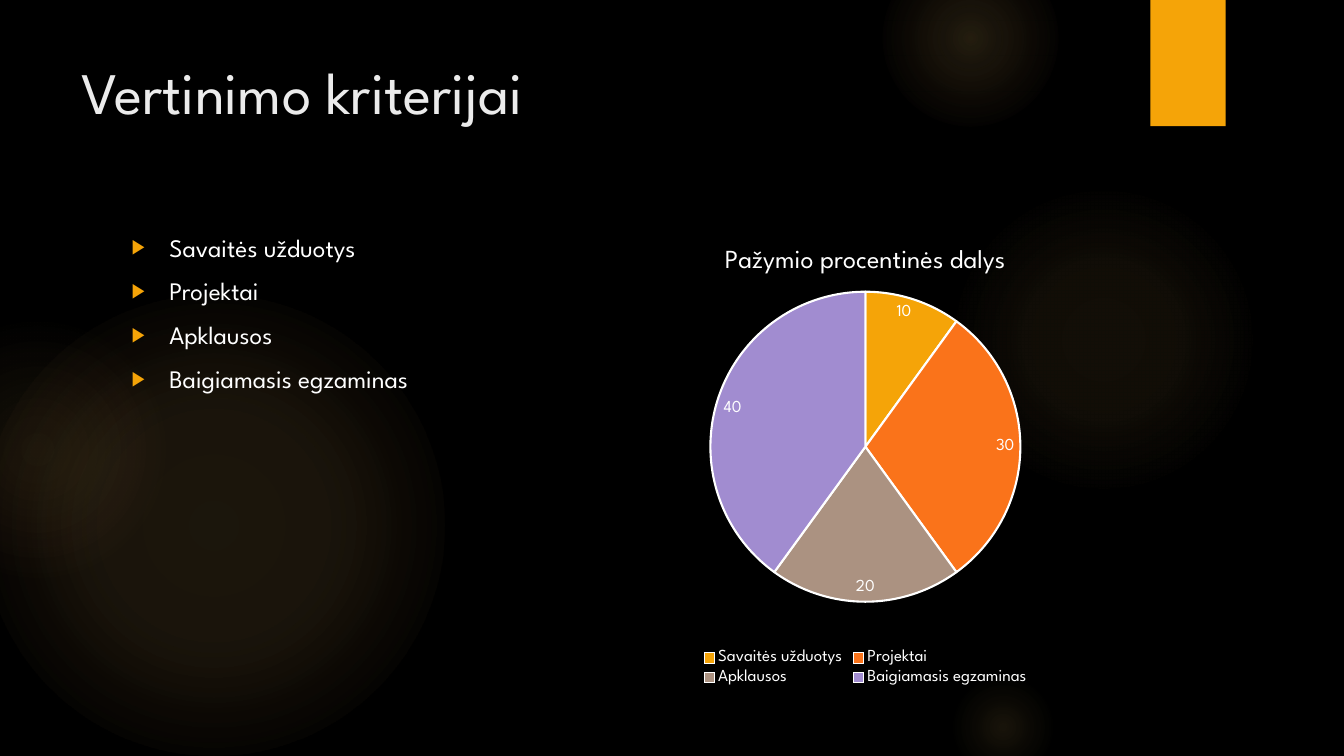
from lxml import etree
from pptx import Presentation
from pptx.chart.data import CategoryChartData
from pptx.dml.color import RGBColor
from pptx.enum import chart as chart_enum, shapes, text
from pptx.oxml import parse_xml
from pptx.oxml.ns import nsdecls, qn
from pptx.util import Cm, Pt

FONT = "League Spartan"
BLACK = RGBColor(0x00, 0x00, 0x00)
WHITE = RGBColor(0xFF, 0xFF, 0xFF)
TITLE_GREY = RGBColor(0xEB, 0xEB, 0xEB)
AMBER = RGBColor(0xF5, 0xA4, 0x08)
ORANGE = RGBColor(0xFA, 0x73, 0x1A)
TAUPE = RGBColor(0xAB, 0x92, 0x81)
LILAC = RGBColor(0xA1, 0x8C, 0xD0)
GLOW = RGBColor(0xFA, 0xC9, 0x6A)
GLOW_RED = RGBColor(0xF5, 0x9B, 0x74)

CHART_TITLE = "Pažymio procentinės dalys"
# Criterion, share of the grade, slice colour
CRITERIA = [
    ("Savaitės užduotys", 10, AMBER),
    ("Projektai", 30, ORANGE),
    ("Apklausos", 20, TAUPE),
    ("Baigiamasis egzaminas", 40, LILAC),
]
# Left, top, diameter in cm; gradient stops as position %, colour, opacity %
GLOWS = [
    (-0.43, 7.42, 11.63, [(0, GLOW, 11), (36, GLOW, 10), (75, GLOW, 0)]),
    (-2.34, 8.05, 6.55, [(0, GLOW, 8), (36, GLOW, 5), (71, GLOW_RED, 0)]),
    (23.9, 4.65, 7.82, [(0, GLOW, 7), (36, GLOW, 6), (69, GLOW, 0)]),
    (22.23, -1.27, 4.45, [(0, GLOW, 14), (36, GLOW, 7), (73, GLOW, 0)]),
    (23.9, 16.94, 2.74, [(0, GLOW, 10), (31, GLOW, 5), (66, GLOW, 0)]),
]


def set_font(font, size, color=WHITE):
    for name, value in {"name": FONT, "size": Pt(size), "bold": False}.items():
        setattr(font, name, value)
    font.color.rgb = color


def add_plain_shape(slide, kind, left, top, width, height):
    shape = slide.shapes.add_shape(kind, Cm(left), Cm(top), Cm(width), Cm(height))
    shape.shadow.inherit = False
    shape.line.fill.background()
    return shape


def add_glow(slide, left, top, diameter, stops):
    shape = add_plain_shape(
        slide, shapes.MSO_SHAPE.OVAL, left, top, diameter, diameter)
    shape.fill.background()
    stop_xml = "".join(
        f'<a:gs pos="{position * 1000}"><a:srgbClr val="{color}">'
        f'<a:alpha val="{opacity * 1000}"/></a:srgbClr></a:gs>'
        for position, color, opacity in stops)
    gradient = parse_xml(
        f'<a:gradFill {nsdecls("a")} rotWithShape="1"><a:gsLst>{stop_xml}</a:gsLst>'
        '<a:path path="circle"><a:fillToRect l="50000" t="50000" r="50000" b="50000"/>'
        '</a:path></a:gradFill>')
    properties = shape.fill._xPr
    properties.replace(properties.find(qn("a:noFill")), gradient)


def add_tab(slide):
    shape = add_plain_shape(
        slide, shapes.MSO_SHAPE.RECTANGLE, 28.99, 0, 1.9, 3.18)
    shape.fill.solid()
    shape.fill.fore_color.rgb = AMBER


def format_title(title, wording):
    box = {"left": Cm(1.8), "top": Cm(1.27), "width": Cm(26.14), "height": Cm(3.89)}
    for name, value in box.items():
        setattr(title, name, value)
    frame = title.text_frame
    frame.text = wording
    frame.vertical_anchor = text.MSO_ANCHOR.TOP
    frame.auto_size = text.MSO_AUTO_SIZE.NONE
    paragraph = frame.paragraphs[0]
    paragraph.alignment = text.PP_ALIGN.LEFT
    set_font(paragraph.runs[0].font, 42, TITLE_GREY)


def add_bullet(paragraph):
    properties = paragraph._p.get_or_add_pPr()
    properties.set("marL", str(Cm(0.95)))
    properties.set("indent", str(-Cm(0.95)))
    color = etree.SubElement(properties, qn("a:buClr"))
    etree.SubElement(color, qn("a:srgbClr"), val=str(AMBER))
    etree.SubElement(properties, qn("a:buSzPct"), val="80000")
    etree.SubElement(properties, qn("a:buFont"), typeface="Arial")
    etree.SubElement(properties, qn("a:buChar"), char="▶")


def add_bullet_list(slide, items):
    box = slide.shapes.add_textbox(Cm(3.07), Cm(5.72), Cm(12.22), Cm(11.66))
    frame = box.text_frame
    frame.word_wrap = True
    for index, item in enumerate(items):
        paragraph = frame.add_paragraph() if index else frame.paragraphs[0]
        add_bullet(paragraph)
        paragraph.space_before = Pt(3.6 if index else 0)
        paragraph.space_after = Pt(6)
        run = paragraph.add_run()
        run.text = item
        set_font(run.font, 18)


def set_plot_layout(chart, **fractions):
    plot_area = chart._chartSpace.chart.plotArea
    for layout in plot_area.findall(qn("c:layout")):
        plot_area.remove(layout)
    sizes = "".join(f'<c:{key} val="{value}"/>' for key, value in fractions.items())
    plot_area.insert(0, parse_xml(
        f'<c:layout {nsdecls("c")}><c:manualLayout><c:layoutTarget val="inner"/>'
        f'<c:xMode val="edge"/><c:yMode val="edge"/>{sizes}'
        '</c:manualLayout></c:layout>'))


def add_pie(slide):
    data = CategoryChartData()
    data.categories = [name for name, _, _ in CRITERIA]
    data.add_series(CHART_TITLE, [share for _, share, _ in CRITERIA])
    chart = slide.shapes.add_chart(
        chart_enum.XL_CHART_TYPE.PIE,
        Cm(15.7), Cm(5.72), Cm(12.22), Cm(11.66), data).chart
    set_font(chart.font, 10)

    # Title and legend
    chart.has_title = True
    chart.chart_title.include_in_layout = False
    frame = chart.chart_title.text_frame
    frame.text = CHART_TITLE
    set_font(frame.paragraphs[0].runs[0].font, 18.6)
    chart.has_legend = True
    chart.legend.position = chart_enum.XL_LEGEND_POSITION.BOTTOM
    chart.legend.include_in_layout = False
    set_font(chart.legend.font, 12)

    # Slices and their labels
    plot = chart.plots[0]
    plot.vary_by_categories = True
    for index, (_, _, color) in enumerate(CRITERIA):
        slice_format = plot.series[0].points[index].format
        slice_format.fill.solid()
        slice_format.fill.fore_color.rgb = color
        slice_format.line.color.rgb = WHITE
        slice_format.line.width = Pt(1.5)
    labels = plot.series[0].data_labels
    labels.show_value = True
    labels.position = chart_enum.XL_LABEL_POSITION.INSIDE_END
    set_font(labels.font, 12)
    set_plot_layout(chart, x=0.18, y=0.14, w=0.64, h=0.67)


def main():
    presentation = Presentation()
    presentation.slide_width = Cm(33.87)
    presentation.slide_height = Cm(19.05)
    slide = presentation.slides.add_slide(presentation.slide_layouts[5])
    slide.background.fill.solid()
    slide.background.fill.fore_color.rgb = BLACK

    # Backdrop
    for glow in GLOWS:
        add_glow(slide, *glow)
    add_tab(slide)

    # Content
    format_title(slide.shapes.title, "Vertinimo kriterijai")
    add_bullet_list(slide, [name for name, _, _ in CRITERIA])
    add_pie(slide)
    presentation.save("out.pptx")


if __name__ == "__main__":
    main()
